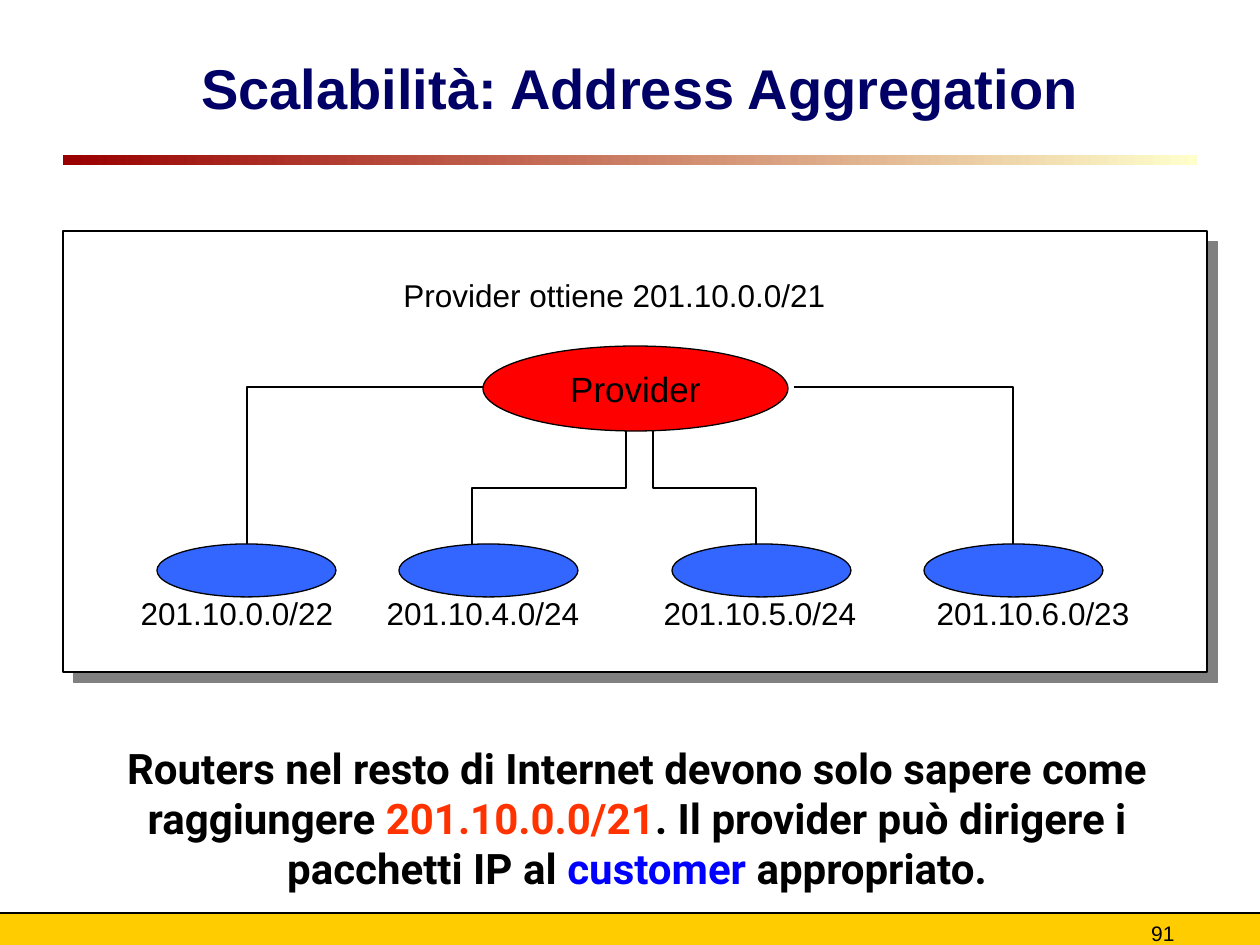
from dataclasses import dataclass

import lxml.etree
import pptx
import pptx.dml.color
import pptx.enum.dml
import pptx.enum.shapes
import pptx.enum.text
import pptx.oxml.ns
import pptx.util

PX_PER_INCH = 126
SHAPE = pptx.enum.shapes.MSO_SHAPE
CONNECTOR = pptx.enum.shapes.MSO_CONNECTOR
ALIGN = pptx.enum.text.PP_ALIGN
ANCHOR = pptx.enum.text.MSO_ANCHOR
BLACK = "000000"
qn = pptx.oxml.ns.qn


@dataclass
class Box:
    left: int
    top: int
    width: int
    height: int


@dataclass
class Customer:
    ellipse_left: int
    label_left: int
    prefix: str


CUSTOMERS = [
    Customer(157, 128, "201.10.0.0/22"),
    Customer(399, 374, "201.10.4.0/24"),
    Customer(672, 651, "201.10.5.0/24"),
    Customer(924, 924, "201.10.6.0/23"),
]


def emu(px: float) -> int:
    return round(px * 914400 / PX_PER_INCH)


def color(value: str) -> pptx.dml.color.RGBColor:
    return pptx.dml.color.RGBColor.from_string(value)


def place(box: Box) -> list[int]:
    return [emu(v) for v in (box.left, box.top, box.width, box.height)]


def add_figure(slide, kind, box: Box, fill: str, outline: str | None = BLACK):
    figure = slide.shapes.add_shape(kind, *place(box))
    figure.shadow.inherit = False
    figure.fill.solid()
    figure.fill.fore_color.rgb = color(fill)
    if outline:
        figure.line.color.rgb = color(outline)
        figure.line.width = pptx.util.Pt(0.75)
    else:
        figure.line.fill.background()
    return figure


def write(frame, runs: list[tuple[str, str]], size: int, align=ALIGN.LEFT,
          bold: bool = False, font: str = "Arial", wrap: bool = False) -> None:
    frame.word_wrap = wrap
    paragraph = frame.paragraphs[0]
    paragraph.alignment = align
    paragraph.font.name = font
    paragraph.font.size = pptx.util.Pt(size)
    paragraph.font.bold = bold
    if len(runs) == 1:
        paragraph.font.color.rgb = color(runs[0][1])
    for text, shade in runs:
        run = paragraph.add_run()
        run.text = text
        if len(runs) > 1:
            run.font.color.rgb = color(shade)


def add_text(slide, box: Box, runs: list[tuple[str, str]], size: int, **style):
    frame = slide.shapes.add_textbox(*place(box)).text_frame
    write(frame, runs, size, **style)
    return frame


def add_link(slide, kind, x1: float, y1: float, x2: float, y2: float):
    link = slide.shapes.add_connector(kind, emu(x1), emu(y1), emu(x2), emu(y2))
    link.line.color.rgb = color(BLACK)
    link.line.width = pptx.util.Pt(0.75)
    lxml.etree.SubElement(link._element.spPr, qn("a:effectLst"))
    return link


def add_corner_link(slide, x1: int, y1: int, x2: int, y2: int) -> None:
    link = add_link(slide, CONNECTOR.ELBOW, x1, y1, x2, y2)
    link._element.spPr.find(qn("a:prstGeom")).set("prst", "bentConnector2")


def add_step_link(slide, x1: int, y1: int, x2: int, y2: int) -> None:
    middle_x, middle_y = (x1 + x2) / 2, (y1 + y2) / 2
    half_dx, half_dy = (x2 - x1) / 2, (y2 - y1) / 2
    link = add_link(slide, CONNECTOR.ELBOW, middle_x - half_dy, middle_y + half_dx,
                    middle_x + half_dy, middle_y - half_dx)
    link._element.spPr.find(qn("a:xfrm")).set("rot", str(90 * 60000))


def add_drop_shadow(figure) -> None:
    effects = figure._element.spPr.find(qn("a:effectLst"))
    shadow = lxml.etree.SubElement(effects, qn("a:outerShdw"), dist=str(pptx.util.Pt(8.5)),
                                   dir=str(45 * 60000), algn="ctr", rotWithShape="0")
    lxml.etree.SubElement(shadow, qn("a:srgbClr"), val="808080")


def add_frame(slide) -> None:
    add_figure(slide, SHAPE.RECTANGLE, Box(0, 913, 1260, 32), "FFCC00", None)
    rule = add_figure(slide, SHAPE.RECTANGLE, Box(63, 155, 1134, 10), "990000", None)
    rule.fill.gradient()
    rule.fill.gradient_angle = 0
    for stop, shade, position in zip(rule.fill.gradient_stops, ("990000", "FFFFCC"), (0, 1)):
        stop.color.rgb = color(shade)
        stop.position = position
    add_link(slide, CONNECTOR.STRAIGHT, 0, 913, 1260, 913)
    add_text(slide, Box(1071, 914, 116, 32), [("91", BLACK)], 12, align=ALIGN.RIGHT, wrap=True)
    title = add_text(slide, Box(189, 35, 977, 105),
                     [("Scalabilità: Address Aggregation", "000066")], 32, bold=True, wrap=True)
    title.vertical_anchor = ANCHOR.MIDDLE


def add_network(slide) -> None:
    panel = add_figure(slide, SHAPE.RECTANGLE, Box(63, 231, 1144, 441), "FFFFFF")
    add_drop_shadow(panel)
    add_text(slide, Box(391, 270, 447, 50), [("Provider ottiene 201.10.0.0/21", BLACK)], 18)
    for customer in CUSTOMERS:
        add_figure(slide, SHAPE.OVAL, Box(customer.ellipse_left, 544, 179, 53), "3366FF")
        add_text(slide, Box(customer.label_left, 588, 218, 50), [(customer.prefix, BLACK)], 18,
                 align=ALIGN.CENTER)
    add_corner_link(slide, 490, 387, 247, 544)
    add_step_link(slide, 626, 431, 472, 545)
    add_corner_link(slide, 794, 387, 1013, 544)
    add_step_link(slide, 653, 431, 756, 545)
    provider = add_figure(slide, SHAPE.OVAL, Box(483, 346, 305, 85), "FF0000")
    write(provider.text_frame, [("Provider", BLACK)], 20, align=ALIGN.CENTER)
    provider.text_frame.vertical_anchor = ANCHOR.MIDDLE


def main() -> None:
    deck = pptx.Presentation()
    deck.slide_width, deck.slide_height = emu(1260), emu(945)
    slide = deck.slides.add_slide(deck.slide_layouts[6])
    add_frame(slide)
    add_network(slide)
    conclusion = [
        ("Routers nel resto di Internet devono solo sapere come raggiungere ", BLACK),
        ("201.10.0.0/21", "FF3300"),
        (". Il provider può dirigere i pacchetti IP al ", BLACK),
        ("customer ", "0000FF"),
        ("appropriato.", BLACK),
    ]
    add_text(slide, Box(79, 736, 1116, 164), conclusion, 24, align=ALIGN.CENTER,
             bold=True, font="Roboto", wrap=True)
    deck.save("out.pptx")


if __name__ == "__main__":
    main()
